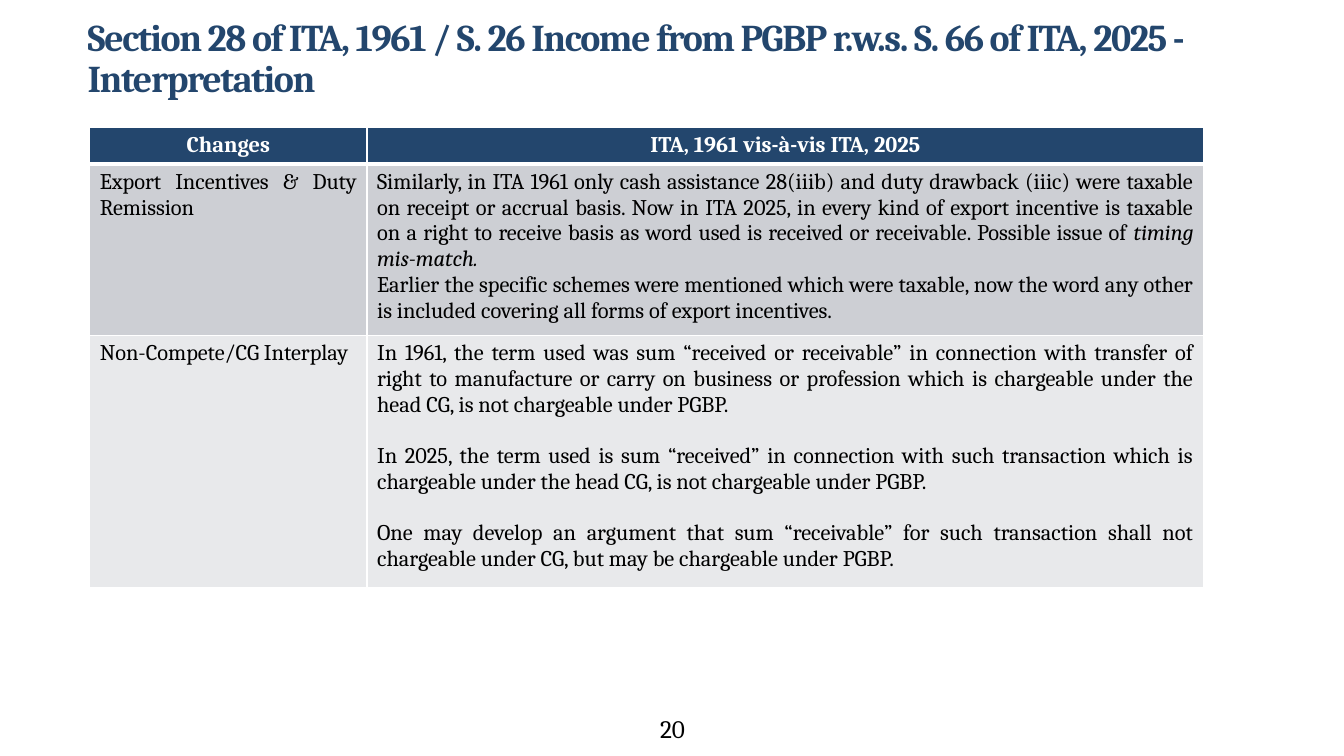
from dataclasses import dataclass

from lxml.etree import SubElement
from pptx import Presentation
from pptx.dml.color import RGBColor
from pptx.enum.text import MSO_ANCHOR, PP_ALIGN
from pptx.oxml.ns import qn
from pptx.util import Inches, Pt


@dataclass(frozen=True)
class Theme:
    font: str = "Cambria"
    navy: str = "23466D"
    white: str = "FFFFFF"
    black: str = "000000"
    bands: tuple = ("CDCFD4", "E8E9EB")
    title_size: float = 27
    body_size: float = 16
    number_size: float = 18
    paragraph_gap: float = 18.4
    border: float = 1
    header_border: float = 3


THEME = Theme()

TITLE = "Section 28 of ITA, 1961 / S. 26 Income from PGBP r.w.s. S. 66 of ITA, 2025 - Interpretation"
HEADINGS = ("Changes", "ITA, 1961 vis-à-vis ITA, 2025")
EXPORT_INCENTIVES = (
    [
        "Similarly, in ITA 1961 only cash assistance 28(iiib) and duty drawback (iiic) were taxable "
        "on receipt or accrual basis. Now in ITA 2025, in every kind of export incentive is taxable "
        "on a right to receive basis as word used is received or receivable. Possible issue of ",
        ("timing mis-match.", {"italic": True}),
    ],
    "Earlier the specific schemes were mentioned which were taxable, now the word any other is "
    "included covering all forms of export incentives.",
)
NON_COMPETE = (
    "In 1961, the term used was sum “received or receivable” in connection with transfer of right "
    "to manufacture or carry on business or profession which is chargeable under the head CG, is "
    "not chargeable under PGBP.",
    "In 2025, the term used is sum “received” in connection with such transaction which is "
    "chargeable under the head CG, is not chargeable under PGBP.",
    "One may develop an argument that sum “receivable” for such transaction shall not chargeable "
    "under CG, but may be chargeable under PGBP.",
)
# Topic, its paragraphs and the gap between them
CHANGES = (
    ("Export Incentives & Duty Remission", EXPORT_INCENTIVES, 0),
    ("Non-Compete/CG Interplay", NON_COMPETE, THEME.paragraph_gap),
)
COLUMN_WIDTHS = (2.75, 8.3)
ROW_HEIGHTS = (0.37, 1.7, 2.5)


def write_text(frame, paragraphs, *, size=THEME.body_size, color=THEME.black, bold=False,
               align=PP_ALIGN.LEFT, gap=0, line_spacing=None, tracking=None):
    """Fill a frame; a paragraph is a string or a list of strings and (string, format) pairs."""
    frame.word_wrap = True
    for index, content in enumerate(paragraphs):
        paragraph = frame.add_paragraph() if index else frame.paragraphs[0]
        paragraph.alignment = align
        paragraph.line_spacing = line_spacing
        if index and gap:
            paragraph.space_before = Pt(gap)
        for piece in [content] if isinstance(content, str) else content:
            text, extra = (piece, {}) if isinstance(piece, str) else piece
            run = paragraph.add_run()
            run.text = text
            run.font.name = THEME.font
            run.font.size = Pt(size)
            run.font.bold = bold
            run.font.italic = extra.get("italic", False)
            run.font.color.rgb = RGBColor.from_string(color)
            if tracking:
                run.font._element.set("spc", str(round(tracking * 100)))


def add_text_box(slide, left, top, width, height, text, *, anchor=MSO_ANCHOR.TOP, **text_format):
    box = slide.shapes.add_textbox(Inches(left), Inches(top), Inches(width), Inches(height))
    box.text_frame.vertical_anchor = anchor
    write_text(box.text_frame, [text], **text_format)


def set_borders(cell, **widths):
    """Draw white borders, with widths in points keyed by L, R, T and B."""
    properties = cell._tc.get_or_add_tcPr()
    for side in "LRTB":
        width = widths.get(side, THEME.border)
        line = SubElement(properties, qn(f"a:ln{side}"), w=str(Pt(width)))
        fill = SubElement(line, qn("a:solidFill"))
        SubElement(fill, qn("a:srgbClr"), val=THEME.white)


def fill_cell(cell, paragraphs, background, *, borders, **text_format):
    set_borders(cell, **borders)
    cell.fill.solid()
    cell.fill.fore_color.rgb = RGBColor.from_string(background)
    write_text(cell.text_frame, paragraphs, **text_format)


def add_changes_table(slide, left, top):
    frame = slide.shapes.add_table(
        len(ROW_HEIGHTS), len(COLUMN_WIDTHS), Inches(left), Inches(top),
        Inches(sum(COLUMN_WIDTHS)), Inches(sum(ROW_HEIGHTS)))
    table = frame.table
    for column, width in zip(table.columns, COLUMN_WIDTHS):
        column.width = Inches(width)
    for row, height in zip(table.rows, ROW_HEIGHTS):
        row.height = Inches(height)

    for column, heading in enumerate(HEADINGS):
        fill_cell(table.cell(0, column), [heading], THEME.navy, color=THEME.white, bold=True,
                  align=PP_ALIGN.CENTER, borders={"B": THEME.header_border})
    for row, (topic, details, gap) in enumerate(CHANGES, start=1):
        borders = {"T": THEME.header_border} if row == 1 else {}
        for column, paragraphs in enumerate(([topic], details)):
            fill_cell(table.cell(row, column), paragraphs, THEME.bands[row - 1],
                      align=PP_ALIGN.JUSTIFY, gap=gap, borders=borders)


def main():
    presentation = Presentation()
    presentation.slide_width = Inches(13.33)
    presentation.slide_height = Inches(7.5)
    slide = presentation.slides.add_slide(presentation.slide_layouts[6])

    add_changes_table(slide, 0.89, 1.26)
    add_text_box(slide, 5.17, 7.03, 3, 0.4, "20", size=THEME.number_size, align=PP_ALIGN.CENTER)
    add_text_box(slide, 0.77, 0.17, 11.5, 0.85, TITLE, size=THEME.title_size, color=THEME.navy,
                 bold=True, anchor=MSO_ANCHOR.MIDDLE, line_spacing=0.9, tracking=-1)
    presentation.save("out.pptx")


if __name__ == "__main__":
    main()
